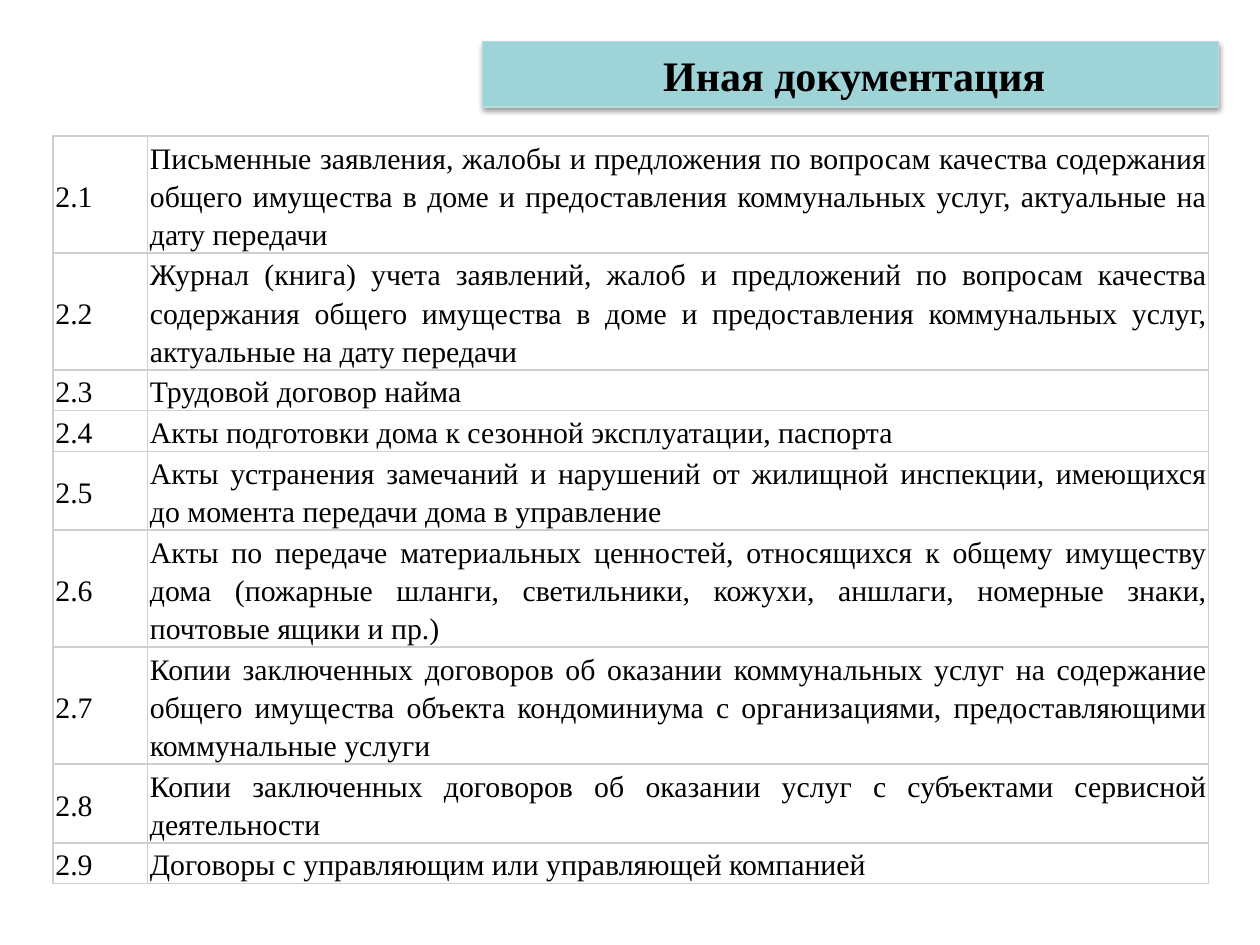
from lxml import etree
from pptx import Presentation
from pptx.dml.color import RGBColor
from pptx.enum.text import MSO_ANCHOR as ANCHOR, MSO_AUTO_SIZE as AUTO, PP_ALIGN as ALIGN
from pptx.oxml import parse_xml
from pptx.util import Inches, Pt

NS = 'xmlns:a="http://schemas.openxmlformats.org/drawingml/2006/main"'
FONT = "Times New Roman"
LINE_H, PAD = 0.3, 0.02
ROWS = [
    (3, "Письменные заявления, жалобы и предложения по вопросам качества содержания общего имущества в доме и предоставления коммунальных услуг, актуальные на дату передачи"),
    (3, "Журнал (книга) учета заявлений, жалоб и предложений по вопросам качества содержания общего имущества в доме и предоставления коммунальных услуг, актуальные на дату передачи"),
    (1, "Трудовой договор найма"),
    (1, "Акты подготовки дома к сезонной эксплуатации, паспорта"),
    (2, "Акты устранения замечаний и нарушений от жилищной инспекции, имеющихся до момента передачи дома в управление"),
    (3, "Акты по передаче материальных ценностей, относящихся к общему имуществу дома (пожарные шланги, светильники, кожухи, аншлаги, номерные знаки, почтовые ящики и пр.)"),
    (3, "Копии заключенных договоров об оказании коммунальных услуг на содержание общего имущества объекта кондоминиума с организациями, предоставляющими коммунальные услуги"),
    (2, "Копии заключенных договоров об оказании услуг с субъектами сервисной деятельности"),
    (1, "Договоры с управляющим или управляющей компанией"),
]


def color(h):
    return RGBColor.from_string(h)


def write(tf, text, size, align, bold=False):
    tf.text = text
    p = tf.paragraphs[0]
    p.alignment = align
    f = p.runs[0].font
    f.name, f.size, f.bold = FONT, Pt(size), bold
    f.color.rgb = color("000000")
    return p


prs = Presentation()
prs.slide_width, prs.slide_height = Inches(10), Inches(7.5)
slide = prs.slides.add_slide(prs.slide_layouts[5])

title = slide.shapes.title
title.left, title.top = Inches(3.83), Inches(0.33)
title.width, title.height = Inches(5.84), Inches(0.52)
spPr = title.element.spPr
spPr.append(parse_xml(
    f'<a:prstGeom {NS} prst="roundRect"><a:avLst>'
    '<a:gd name="adj" fmla="val 4400"/></a:avLst></a:prstGeom>'))
title.fill.solid()
title.fill.fore_color.rgb = color("9ED3D7")
title.line.color.rgb = color("B6DCDF")
title.line.width = Pt(0.75)
spPr.append(parse_xml(
    f'<a:effectLst {NS}><a:outerShdw blurRad="{Pt(3.1)}" dist="{Pt(1.6)}" dir="5400000" rotWithShape="0">'
    '<a:srgbClr val="000000"><a:alpha val="38000"/></a:srgbClr></a:outerShdw></a:effectLst>'))
tf = title.text_frame
tf.auto_size, tf.word_wrap, tf.vertical_anchor = AUTO.NONE, True, ANCHOR.MIDDLE
tf.margin_left, tf.margin_right = Inches(0.06), 0
tf.margin_top = tf.margin_bottom = Inches(0.05)
write(tf, "Иная документация", 24, ALIGN.CENTER, True)

height = sum(n * LINE_H + PAD for n, _ in ROWS)
table = slide.shapes.add_table(
    len(ROWS), 2, Inches(0.42), Inches(1.08), Inches(9.17), Inches(height)).table
table.first_row = table.horz_banding = False
table.columns[0].width, table.columns[1].width = Inches(0.75), Inches(8.42)

for i, (lines, text) in enumerate(ROWS):
    table.rows[i].height = Inches(lines * LINE_H + PAD)
    for j, value in enumerate((f"2.{i + 1}", text)):
        cell = table.cell(i, j)
        cell.vertical_anchor = ANCHOR.MIDDLE
        cell.margin_left = cell.margin_right = Inches(0.01)
        cell.margin_top = cell.margin_bottom = Inches(0.01)
        p = write(cell.text_frame, value, 17, ALIGN.JUSTIFY)
        p.line_spacing, p.space_after = 1.15, Pt(1)
        pPr = p.runs[0].font._element.getparent().getparent().get_or_add_pPr()
        pPr.set("marL", str(Inches(0.01)))
        tcPr = cell._tc.get_or_add_tcPr()
        for side in "LRTB":
            ln = etree.fromstring(
                f'<a:ln{side} {NS} w="{Pt(1)}"><a:solidFill><a:srgbClr val="CFCFCF"/>'
                f'</a:solidFill></a:ln{side}>')
            tcPr.append(ln)
        cell.fill.background()

prs.save("out.pptx")
